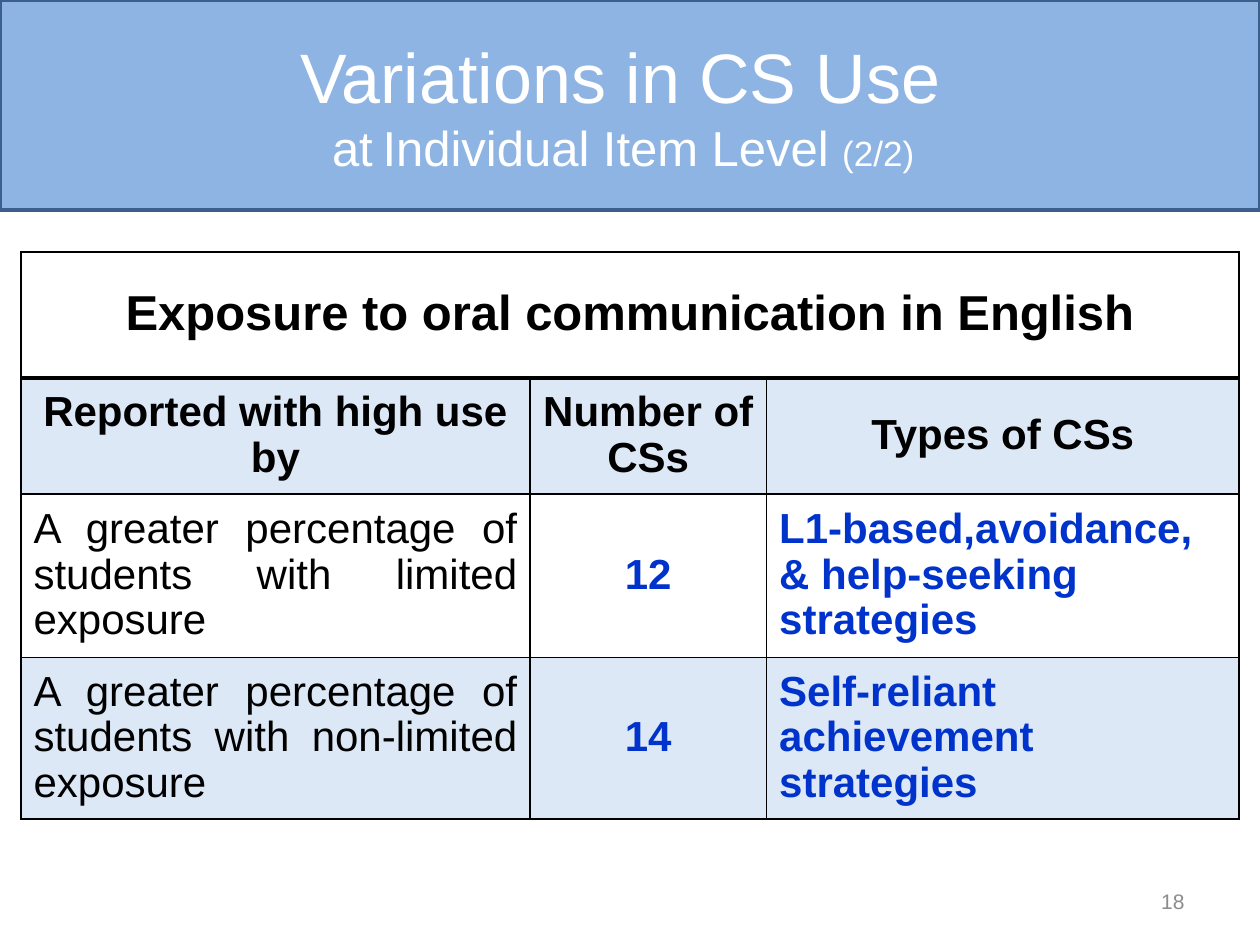
from lxml.etree import SubElement
from pptx import Presentation
from pptx.dml.color import RGBColor
from pptx.enum.text import MSO_ANCHOR, PP_ALIGN
from pptx.oxml import parse_xml
from pptx.oxml.ns import nsdecls, qn
from pptx.util import Emu, Inches, Pt

COLORS = {
    "banner": "8EB4E3", "banner_line": "3A5F8C", "band": "558ED5",
    "strategy": "0033CC", "text": "000000", "white": "FFFFFF", "number": "8C8C8C",
}
FONT = "Arial"
COLUMNS = [4.04, 1.88, 3.75]
ROWS = [1, 0.92, 1.3, 1.28]
CENTER, JUSTIFY, LEFT = PP_ALIGN.CENTER, PP_ALIGN.JUSTIFY, PP_ALIGN.LEFT


def color(name):
    return RGBColor.from_string(COLORS[name])


def style(span, size, color_name, bold=False):
    span.font.name = FONT
    span.font.size = Pt(size)
    span.font.bold = bold
    span.font.color.rgb = color(color_name)


def place(shape, box):
    shape.left, shape.top, shape.width, shape.height = (Emu(int(n)) for n in box)


def add_banner(page, box):
    """Title on a filled band."""
    title = page.shapes.title
    place(title, box)
    title.fill.solid()
    title.fill.fore_color.rgb = color("banner")
    title.line.color.rgb = color("banner_line")
    title.line.width = Pt(2)
    frame = title.text_frame
    frame.word_wrap = True
    frame.vertical_anchor = MSO_ANCHOR.MIDDLE
    para = frame.paragraphs[0]
    para.alignment = CENTER
    para.line_spacing = 1.0
    parts = [("Variations in CS Use ", 40), ("at", 28), (" ", 20),
             ("Individual Item Level ", 28), ("(2/2)", 20), (" ", 28)]
    for index, (words, size) in enumerate(parts):
        if index == 1:
            para.add_line_break()
        span = para.add_run()
        span.text = words
        style(span, size, "white")


def set_borders(cell, top, bottom):
    """Black borders; the horizontal ones have their own widths."""
    properties = cell._tc.get_or_add_tcPr()
    widths = {"lnL": 1, "lnR": 1, "lnT": top, "lnB": bottom}
    for index, (side, width) in enumerate(widths.items()):
        properties.insert(index, parse_xml(
            f'<a:{side} {nsdecls("a")} w="{Pt(width)}"><a:solidFill>'
            f'<a:srgbClr val="{COLORS["text"]}"/></a:solidFill></a:{side}>'))


def set_fill(cell, banded):
    if not banded:
        cell.fill.background()
        return
    cell.fill.solid()
    cell.fill.fore_color.rgb = color("band")
    tint = cell._tc.tcPr.find(qn("a:solidFill")).find(qn("a:srgbClr"))
    SubElement(tint, qn("a:alpha"), val="20000")


def fill_cell(cell, words, alignment, size, color_name, bold):
    cell.vertical_anchor = MSO_ANCHOR.MIDDLE
    cell.text = words
    para = cell.text_frame.paragraphs[0]
    para.alignment = alignment
    para.line_spacing = 0.97
    for span in para.runs:
        style(span, size, color_name, bold)


def add_exposure_table(page, box):
    """Heading row, column heads and two rows of findings."""
    heading = ["Exposure to oral communication in English"]
    heads = ["Reported with high use by", "Number of CSs", "Types of CSs"]
    findings = [
        ("A greater percentage of students with limited exposure", "12",
         "L1-based,avoidance, & help-seeking strategies", LEFT),
        ("A greater percentage of students with non-limited exposure", "14",
         "Self-reliant achievement strategies", JUSTIFY),
    ]
    rows = [[(words, CENTER, 28, "text", True) for words in heading],
            [(words, CENTER, 24, "text", True) for words in heads]]
    for group, count, types, alignment in findings:
        rows.append([(group, JUSTIFY, 24, "text", False),
                     (count, CENTER, 24, "strategy", True),
                     (types, alignment, 24, "strategy", True)])

    holder = page.shapes.add_table(len(ROWS), len(COLUMNS), *(Emu(int(n)) for n in box))
    table = holder.table
    for column, share in zip(table.columns, COLUMNS):
        column.width = Emu(int(box[2] * share / sum(COLUMNS)))
    for row, share in zip(table.rows, ROWS):
        row.height = Emu(int(box[3] * share / sum(ROWS)))
    table.cell(0, 0).merge(table.cell(0, len(COLUMNS) - 1))

    for r, row in enumerate(rows):
        for c in range(len(COLUMNS)):
            cell = table.cell(r, c)
            set_fill(cell, banded=r % 2 == 1)
            set_borders(cell, top=2 if r == 1 else 1, bottom=2 if r == 0 else 1)
            if c < len(row):
                fill_cell(cell, *row[c])


def add_page_number(page, box, number):
    holder = page.shapes.add_textbox(*(Emu(int(n)) for n in box))
    frame = holder.text_frame
    frame.word_wrap = True
    frame.vertical_anchor = MSO_ANCHOR.MIDDLE
    frame.text = number
    para = frame.paragraphs[0]
    para.alignment = PP_ALIGN.RIGHT
    style(para.runs[0], 12, "number")


def main():
    deck = Presentation()
    deck.slide_width, deck.slide_height = Inches(10), Inches(7.5)
    width = deck.slide_width
    page = deck.slides.add_slide(deck.slide_layouts[5])
    margin = width / 60
    add_banner(page, (0, 0, width, width / 6))
    add_exposure_table(page, (margin, width / 5, width - 2 * margin, Inches(sum(ROWS))))
    add_page_number(page, (Inches(7.17), Inches(6.95), Inches(2.33), Inches(0.4)), "18")
    deck.save("out.pptx")


if __name__ == "__main__":
    main()
